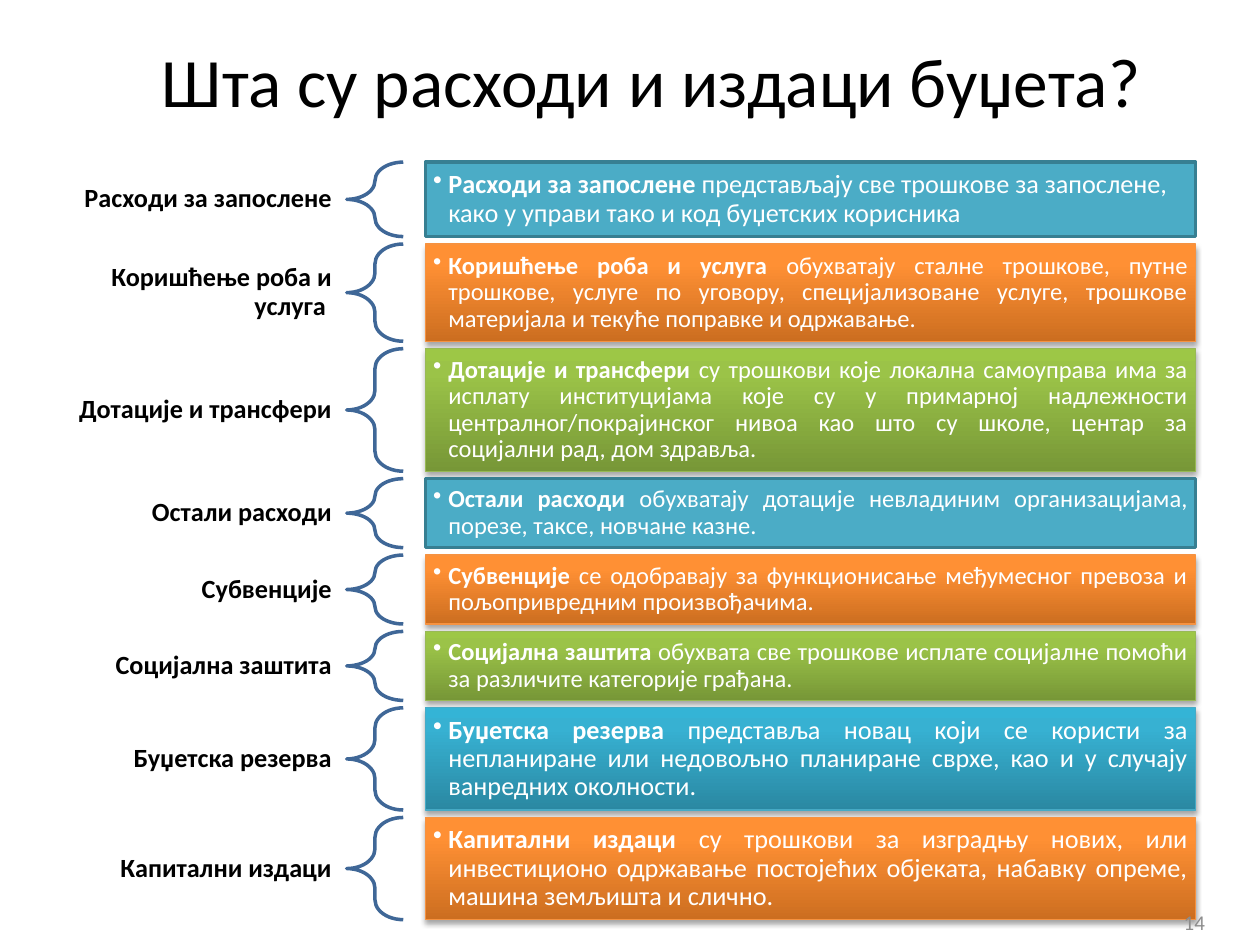
import lxml.etree
import pptx
import pptx.dml.color
import pptx.enum.shapes
import pptx.enum.text
import pptx.oxml.ns
import pptx.util

Cm = pptx.util.Cm
Pt = pptx.util.Pt
FORM = pptx.enum.shapes.MSO_SHAPE
ALIGN = pptx.enum.text.PP_ALIGN

TOP, GAP = 3.27, 0.15
LABEL, BRACE, PANEL = (1.27, 5.72), (6.99, 1.14), (8.58, 15.52)

FLAT = {"fill": ["4BACC6"], "edge": "377F92", "width": 2}
WARM = {"fill": ["CC6E20", "FF9034", "FF9136"], "edge": "F69240", "width": 0.75}
GREEN = {"fill": ["779737", "9BC348", "9DC746"], "edge": "98B955", "width": 0.75}
BLUE = {"fill": ["2A88A2", "37B1D2", "34B4D6"], "edge": "46AAC5", "width": 0.75}

ROWS = [
    ("Расходи за запослене", " представљају све трошкове за запослене, "
     "како у управи тако и код буџетских корисника", 1.5, 15, FLAT, ALIGN.LEFT),
    ("Коришћење роба и услуга ", "обухватају сталне трошкове, путне трошкове, "
     "услуге по уговору, специјализоване услуге, трошкове материјала и текуће "
     "поправке и одржавање.", 1.96, 14, WARM, ALIGN.JUSTIFY),
    ("Дотације и трансфери", " су трошкови које локална самоуправа има за "
     "исплату институцијама које су у примарној надлежности "
     "централног/покрајинског нивоа као што су школе, центар за социјални рад, "
     "дом здравља.", 2.47, 14, GREEN, ALIGN.JUSTIFY),
    ("Остали расходи", " обухватају дотације невладиним организацијама, "
     "порезе, таксе, новчане казне.", 1.39, 14, FLAT, ALIGN.JUSTIFY),
    ("Субвенције", " сe одобравају за функционисање међумесног превоза и "
     "пољопривредним произвођачима.", 1.39, 14, WARM, ALIGN.JUSTIFY),
    ("Социјална заштита", " обухвата све трошкове исплате социјалне помоћи за "
     "различите категорије грађана.", 1.39, 14, GREEN, ALIGN.JUSTIFY),
    ("Буџетска резерва", " представља новац који се користи за непланиране или "
     "недовољно планиране сврхе, као и у случају ванредних околности.",
     2.06, 15, BLUE, ALIGN.JUSTIFY),
    ("Капитални издаци", " су трошкови за изградњу нових, или инвестиционо "
     "одржавање постојећих објеката, набавку опреме, машина земљишта и слично.",
     2.06, 15, WARM, ALIGN.JUSTIFY),
]


def color(code):
    """Turn a hex string into a colour."""
    return pptx.dml.color.RGBColor.from_string(code)


def node(root, tag, **attrs):
    """Append a drawing element with the given attributes."""
    item = lxml.etree.SubElement(root, pptx.oxml.ns.qn("a:" + tag))
    for key, value in attrs.items():
        item.set(key, str(value))
    return item


def write(shape, *parts, size, ink="000000", bold=False, align=ALIGN.LEFT,
          inset=(0.25, 0.13), space=1.0):
    """Write parts as runs of one paragraph; only the first may be bold."""
    frame = shape.text_frame
    frame.word_wrap = True
    frame.vertical_anchor = pptx.enum.text.MSO_ANCHOR.MIDDLE
    frame.margin_left = frame.margin_right = Cm(inset[0])
    frame.margin_top = frame.margin_bottom = Cm(inset[1])
    para = frame.paragraphs[0]
    para.alignment, para.line_spacing = align, space
    for index, part in enumerate(parts):
        run = para.add_run()
        run.text = part
        run.font.name, run.font.size = "Calibri", Pt(size)
        run.font.bold = bold and index == 0
        run.font.color.rgb = color(ink)
    return para


def box(slide, left, top, width, height):
    """Add an empty text box."""
    return slide.shapes.add_textbox(Cm(left), Cm(top), Cm(width), Cm(height))


def form(slide, kind, left, top, width, height, edge, line):
    """Add an outlined preset shape without shadow."""
    shape = slide.shapes.add_shape(kind, Cm(left), Cm(top), Cm(width), Cm(height))
    shape.shadow.inherit = False
    shape.line.color.rgb = color(edge)
    shape.line.width = Pt(line)
    return shape


def brace(slide, top, height):
    """Add the brace that joins a label to its panel."""
    shape = form(slide, FORM.LEFT_BRACE, BRACE[0], top, BRACE[1], height, "3F6797", 2)
    shape.fill.background()
    shape.adjustments[0], shape.adjustments[1] = 0.35, 0.5


def blend(shape, codes):
    """Fill a shape with a rising gradient and give it a soft shadow."""
    shape.fill.gradient()
    shape.fill.gradient_angle = 90
    stops = shape.element.spPr.find(".//" + pptx.oxml.ns.qn("a:gsLst"))
    for stop in list(stops):
        stops.remove(stop)
    for place, code in zip((0, 80, 100), codes):
        node(node(stops, "gs", pos=place * 1000), "srgbClr", val=code)
    effect = shape.element.spPr.find(pptx.oxml.ns.qn("a:effectLst"))
    shade = node(effect, "outerShdw", blurRad=Pt(3.1), dist=Pt(1.8),
                 dir=90 * 60000, rotWithShape=0)
    node(node(shade, "srgbClr", val="000000"), "alpha", val=35000)


def panel(slide, top, height, style):
    """Add the filled rectangle of one row."""
    shape = form(slide, FORM.RECTANGLE, PANEL[0], top, PANEL[1], height,
                 style["edge"], style["width"])
    if len(style["fill"]) > 1:
        blend(shape, style["fill"])
    else:
        shape.fill.solid()
        shape.fill.fore_color.rgb = color(style["fill"][0])
    return shape


def bullet(para):
    """Give a paragraph a hanging round bullet."""
    props = para._p.get_or_add_pPr()
    props.set("marL", str(Cm(0.31)))
    props.set("indent", str(-Cm(0.31)))
    node(props, "buChar", char="•")


def row(slide, top, name, text, height, size, style, align):
    """Add label, brace and panel of one kind of expense."""
    label = box(slide, LABEL[0], top, LABEL[1], height)
    write(label, name, size=15, bold=True, align=ALIGN.RIGHT,
          inset=(0.3, 0.1), space=0.9)
    brace(slide, top, height)
    para = write(panel(slide, top, height, style), name, text, size=size,
                 ink="FFFFFF", bold=True, align=align, inset=(0.15, 0.15), space=0.9)
    bullet(para)


def main():
    """Build the slide and save it."""
    deck = pptx.Presentation()
    deck.slide_width, deck.slide_height = Cm(25.4), Cm(19.05)
    slide = deck.slides.add_slide(deck.slide_layouts[6])
    write(box(slide, 1.7, 0.74, 22.86, 1.73), "Шта су расходи и издаци буџета?",
          size=39.6, align=ALIGN.CENTER)
    top = TOP
    for item in ROWS:
        row(slide, top, *item)
        top += item[2] + GAP
    write(box(slide, 18.62, 18.08, 5.92, 1.02), "14", size=12, ink="8C8C8C",
          align=ALIGN.RIGHT)
    deck.save("out.pptx")


if __name__ == "__main__":
    main()
